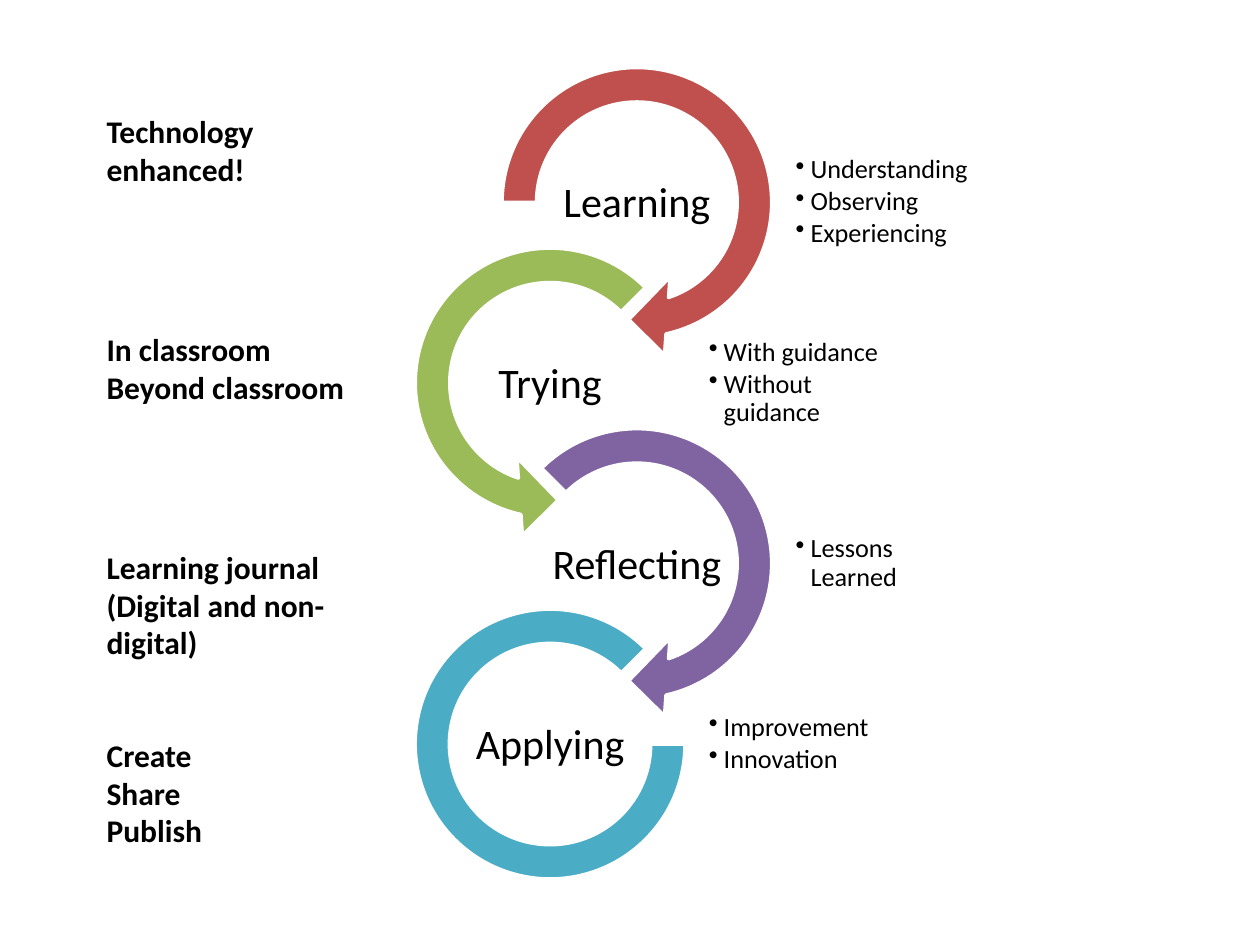
from lxml.etree import SubElement
from pptx import Presentation
from pptx.dml.color import RGBColor
from pptx.enum.shapes import MSO_SHAPE
from pptx.enum.text import MSO_ANCHOR, MSO_AUTO_SIZE, PP_ALIGN
from pptx.oxml.ns import qn
from pptx.util import Cm, Pt

BLACK = RGBColor(0x00, 0x00, 0x00)
WHITE = RGBColor(0xFF, 0xFF, 0xFF)
RED = RGBColor(0xC0, 0x50, 0x4D)
GREEN = RGBColor(0x9B, 0xBB, 0x59)
PURPLE = RGBColor(0x80, 0x64, 0xA2)
TEAL = RGBColor(0x4B, 0xAC, 0xC6)

FONT = "Calibri"
RIGHT, LEFT = 12.84, 11.09  # ring centres, in cm
TOP, STEP = 4.08, 3.64      # first ring centre and pitch, in cm
ARROW, ARC = 6.32, 5.44     # ring sizes, in cm

# Ring: centre, shape, size, adjustments, colour, label, bullets
STAGES = [
    (RIGHT, MSO_SHAPE.CIRCULAR_ARROW, ARROW, (0.11, 11.42, 45, 108, 0.125),
     RED, "Learning", ["Understanding", "Observing", "Experiencing"]),
    (LEFT, MSO_SHAPE.LEFT_CIRCULAR_ARROW, ARROW, (0.11, 11.42, 63, 189, 0.125),
     GREEN, "Trying", ["With guidance", "Without guidance"]),
    (RIGHT, MSO_SHAPE.CIRCULAR_ARROW, ARROW, (0.11, 11.42, 45, 135, 0.125),
     PURPLE, "Reflecting", ["Lessons Learned"]),
    (LEFT, MSO_SHAPE.BLOCK_ARC, ARC, (0, 189, 0.127),
     TEAL, "Applying", ["Improvement", "Innovation"]),
]

# Side note: top and height in cm, lines
NOTES = [
    (2.13, 1.8, ["Technology enhanced!"]),
    (6.53, 1.8, ["In classroom", "Beyond classroom"]),
    (10.92, 2.57, ["Learning journal", "(Digital and non-digital)"]),
    (14.71, 2.57, ["Create", "Share", "Publish"]),
]


def add_bullet(para):
    props = para._p.get_or_add_pPr()
    props.set("marL", str(Cm(0.3)))
    props.set("indent", str(-Cm(0.3)))
    SubElement(props, qn("a:buChar")).set("char", "•")


def add_text(shapes, lines, x, y, w, h, size, bold=False, align=PP_ALIGN.LEFT,
             anchor=MSO_ANCHOR.TOP, inset=None, space=None, after=None,
             bullet=False, grow=False):
    box = shapes.add_textbox(Cm(x), Cm(y), Cm(w), Cm(h))
    frame = box.text_frame
    frame.word_wrap = True
    frame.vertical_anchor = anchor
    if grow:
        frame.auto_size = MSO_AUTO_SIZE.SHAPE_TO_FIT_TEXT
    if inset is not None:
        frame.margin_left = frame.margin_right = Cm(inset)
        frame.margin_top = frame.margin_bottom = Cm(inset)
    for i, line in enumerate(lines):
        para = frame.add_paragraph() if i else frame.paragraphs[0]
        para.alignment = align
        para.line_spacing = space
        para.space_after = after
        if bullet:
            para.level = 1
            add_bullet(para)
        run = para.add_run()
        run.text = line
        run.font.name = FONT
        run.font.size = Pt(size)
        run.font.bold = bold
        run.font.color.rgb = BLACK


def add_ring(shapes, kind, x, y, size, adjust, fill):
    ring = shapes.add_shape(kind, Cm(x - size / 2), Cm(y - size / 2),
                            Cm(size), Cm(size))
    for i, value in enumerate(adjust):
        ring.adjustments[i] = value
    ring.shadow.inherit = False
    ring.fill.solid()
    ring.fill.fore_color.rgb = fill
    ring.line.color.rgb = WHITE
    ring.line.width = Pt(2)


def main():
    deck = Presentation()
    deck.slide_width, deck.slide_height = Cm(25.4), Cm(19.05)
    slide = deck.slides.add_slide(deck.slide_layouts[6])

    # Cycle of rings, each with its bullets and label
    cycle = slide.shapes.add_group_shape().shapes
    for i, (x, kind, size, adjust, fill, label, points) in enumerate(STAGES):
        y = TOP + i * STEP
        add_ring(cycle, kind, x, y, size, adjust, fill)
        add_text(cycle, points, x + 3.17, y - 1.26, 3.81, 2.52, 15,
                 anchor=MSO_ANCHOR.MIDDLE, inset=0.03, space=0.9,
                 after=Pt(2), bullet=True)
        add_text(cycle, [label], x - 1.77, y - 0.85, 3.54, 1.78, 24,
                 align=PP_ALIGN.CENTER, anchor=MSO_ANCHOR.MIDDLE,
                 inset=0.05, space=0.9)

    # Side notes
    for y, h, lines in NOTES:
        add_text(slide.shapes, lines, 1.9, y, 6.2, h, 18, bold=True, grow=True)

    deck.save("out.pptx")


if __name__ == "__main__":
    main()
